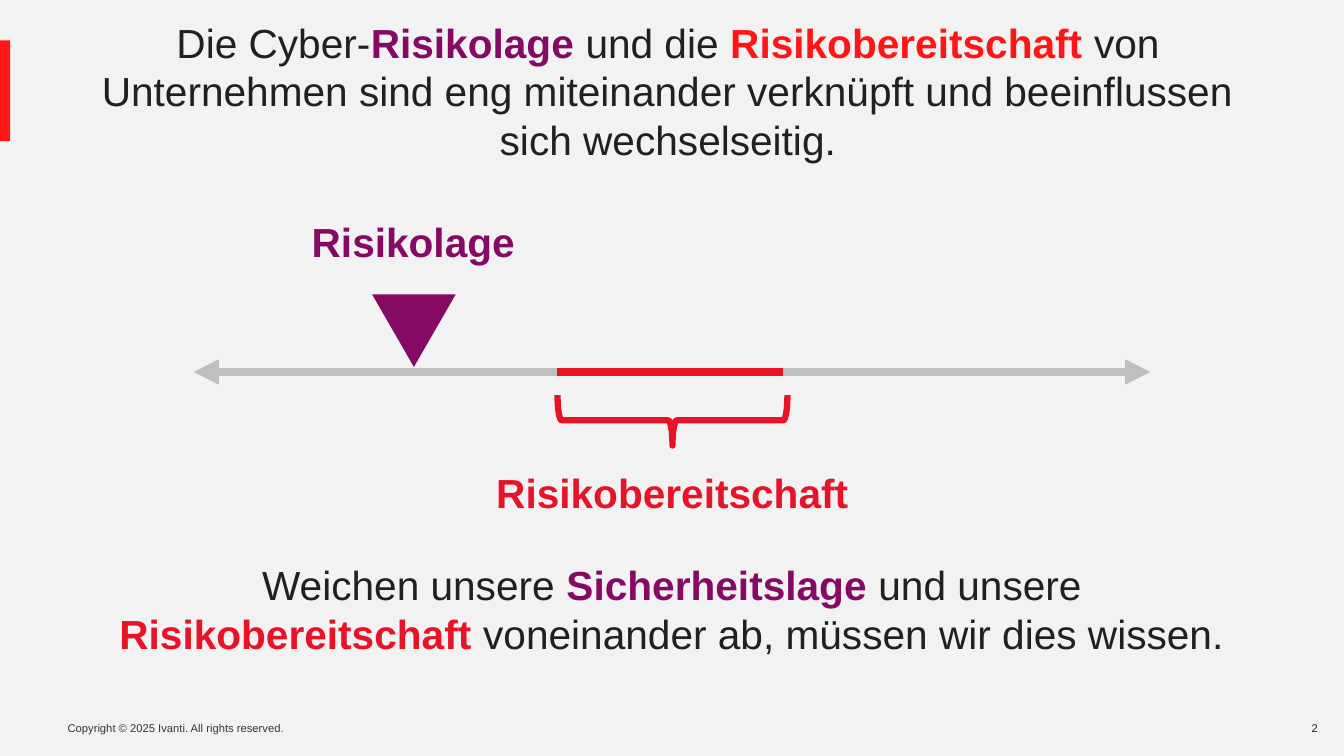
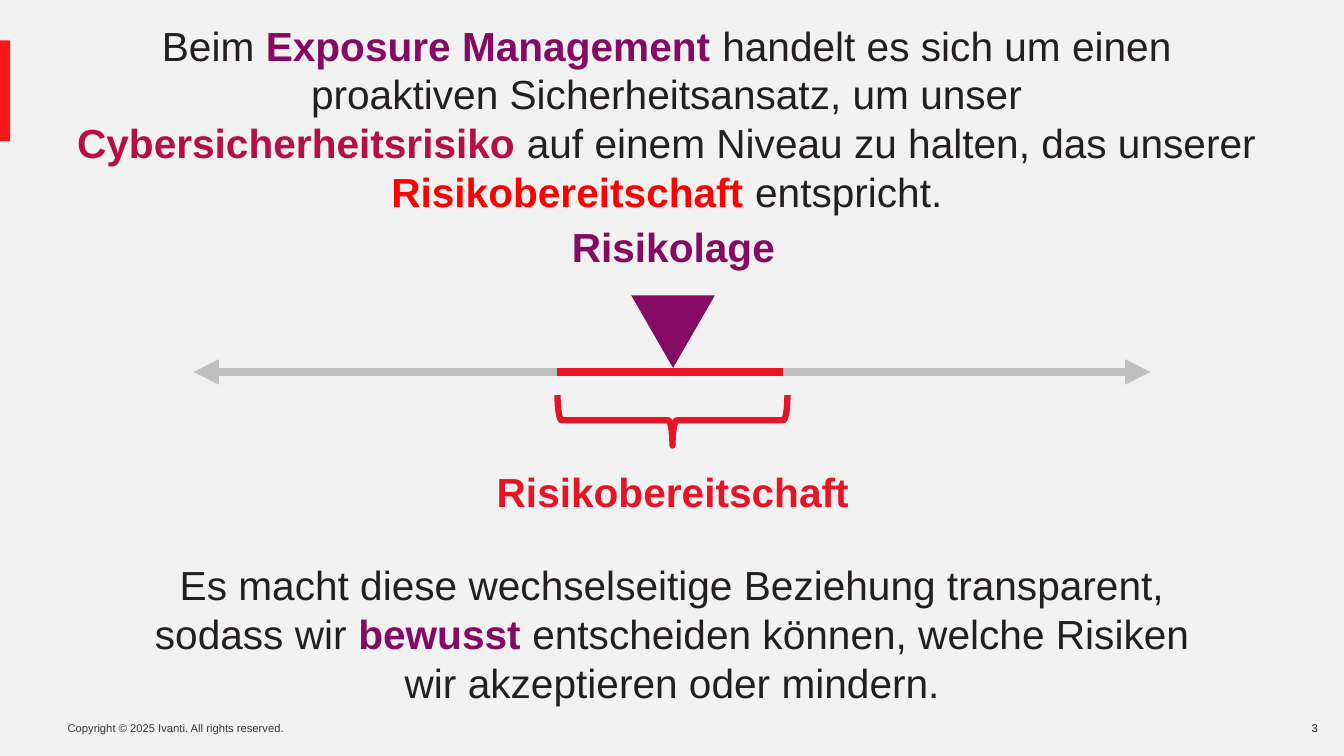
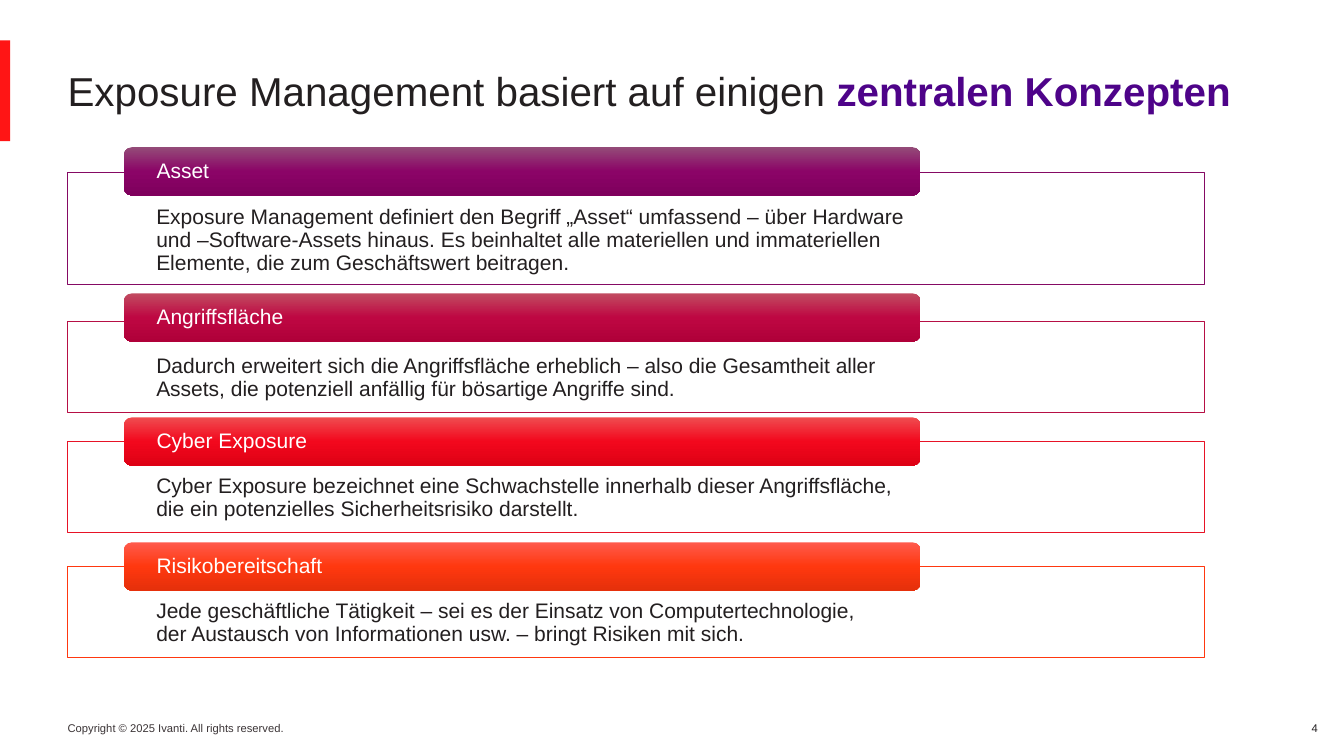
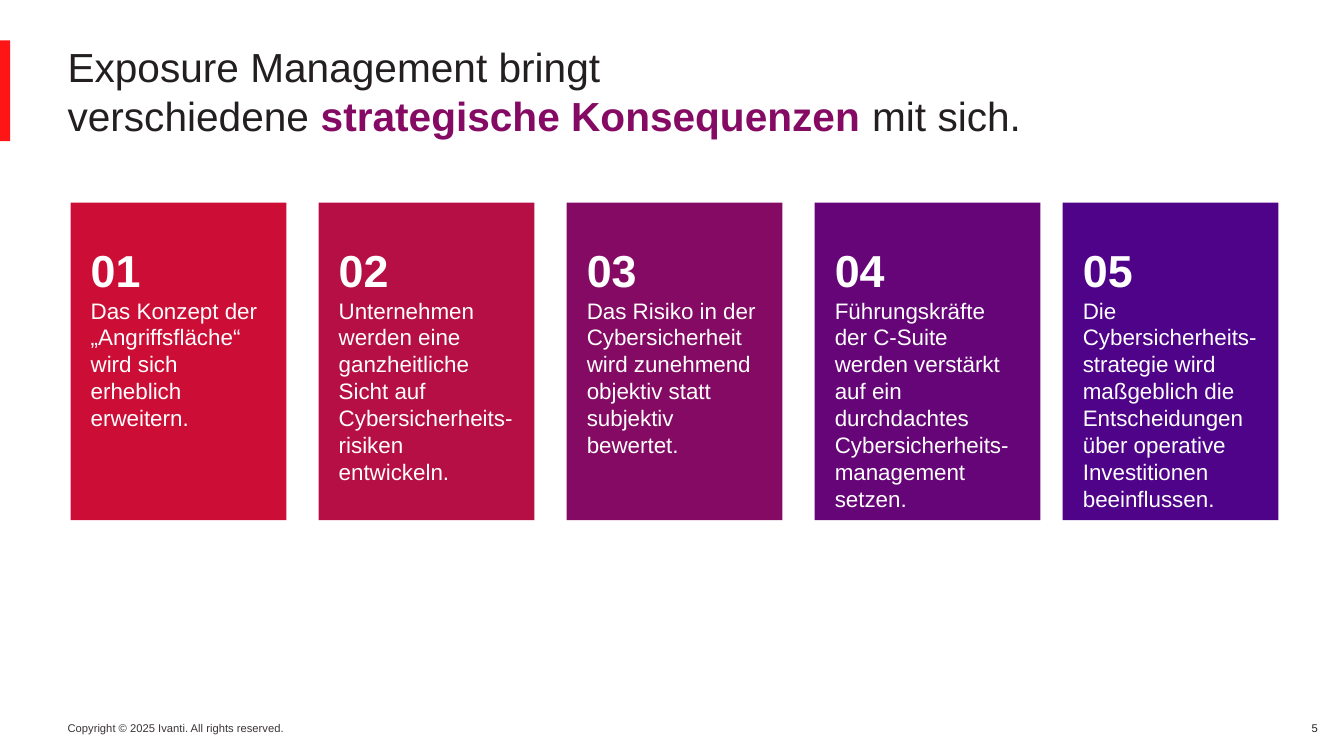
"""Build four slides on exposure management, risk posture and risk appetite."""
from copy import deepcopy
from dataclasses import dataclass

from lxml.etree import SubElement
from pptx import Presentation
from pptx.dml.color import RGBColor
from pptx.enum.shapes import MSO_CONNECTOR, MSO_SHAPE
from pptx.enum.text import MSO_ANCHOR, PP_ALIGN
from pptx.oxml.ns import qn
from pptx.util import Emu, Pt


@dataclass(frozen=True)
class Theme:
    font: str = "Arial"
    ink: str = "231F20"
    foot: str = "3B3436"
    white: str = "FFFFFF"
    pale: str = "F2F2F2"
    grey: str = "BFBFBF"
    band: str = "FF1515"
    pure: str = "FF0000"
    red: str = "E71326"
    rose: str = "CC0E36"
    wine: str = "B60F45"
    plum: str = "850A64"
    grape: str = "660578"
    violet: str = "4E0389"
    orange: str = "FF380F"
    small: float = 8
    body: float = 15
    card: float = 16
    label: float = 29
    key: float = 28.8
    number: float = 32


T = Theme()
PX = 9144
WIDE, HIGH = 1333, 750
LEFT, CENTER, RIGHT = PP_ALIGN.LEFT, PP_ALIGN.CENTER, PP_ALIGN.RIGHT
TOP, MIDDLE = MSO_ANCHOR.TOP, MSO_ANCHOR.MIDDLE
COPY = "Copyright © 2025 Ivanti. All rights reserved."
TITLE = (67, 59, 1201, 62)

SCALES = [
    {
        "title": ["Die Cyber-", ("Risikolage ", T.plum), "und die ", ("Risikobereitschaft", T.band),
                  " von Unternehmen sind eng miteinander verknüpft und beeinflussen sich wechselseitig."],
        "box": TITLE,
        "mark": (369, 292),
        "posture": (233, 210, 354, 61),
        "appetite": (447, 459, 440, 61),
        "note": ["Weichen unsere ", ("Sicherheitslage ", T.plum), "und unsere\n",
                 ("Risikobereitschaft ", T.red), "voneinander ab, müssen wir dies wissen."],
        "place": (93, 551, 1147, 108),
    },
    {
        "title": ["Beim", (" Exposure Management ", T.plum),
                  "handelt es sich um einen proaktiven Sicherheitsansatz, um unser\n",
                  ("Cybersicherheitsrisiko ", T.wine), "auf einem Niveau zu halten, das unserer ",
                  ("Risikobereitschaft", T.pure), " entspricht."],
        "box": (66, 86, 1201, 62),
        "mark": (626, 293),
        "posture": (491, 215, 354, 61),
        "appetite": (451, 458, 433, 61),
        "note": ["Es macht diese wechselseitige Beziehung transparent, sodass wir ", ("bewusst ", T.plum),
                 "entscheiden können, welche Risiken wir akzeptieren oder mindern."],
        "place": (118, 551, 1098, 162),
    },
]

TERMS = [
    ("Asset", 146, 171, 111, T.plum, ("944B78", "8B0467", "7F005D"),
     "Exposure Management definiert den Begriff „Asset“ umfassend – über Hardware\n"
     "und –Software-Assets hinaus. Es beinhaltet alle materiellen und immateriellen\n"
     "Elemente, die zum Geschäftswert beitragen."),
    ("Angriffsfläche", 291, 319, 90, T.wine, ("C14C61", "BE0742", "AF0039"),
     "Dadurch erweitert sich die Angriffsfläche erheblich – also die Gesamtheit aller\n"
     "Assets, die potenziell anfällig für bösartige Angriffe sind."),
    ("Cyber Exposure", 414, 438, 90, T.red, ("F04C50", "F2081D", "DE0014"),
     "Cyber Exposure bezeichnet eine Schwachstelle innerhalb dieser Angriffsfläche,\n"
     "die ein potenzielles Sicherheitsrisiko darstellt."),
    ("Risikobereitschaft", 538, 562, 90, T.orange, ("FF5B4D", "FF380F", "E5300B"),
     "Jede geschäftliche Tätigkeit – sei es der Einsatz von Computertechnologie,\n"
     "der Austausch von Informationen usw. – bringt Risiken mit sich."),
]

CARDS = [
    (T.rose, 214, ["Das Konzept der „Angriffsfläche“ wird sich erheblich erweitern."]),
    (T.wine, 214, ["Unternehmen werden eine ganzheitliche",
                   "Sicht auf Cybersicherheits-risiken entwickeln."]),
    (T.plum, 214, ["Das Risiko in der Cybersicherheit wird zunehmend objektiv statt subjektiv bewertet."]),
    (T.grape, 224, ["Führungskräfte der C-Suite\nwerden verstärkt auf ein durchdachtes "
                    "Cybersicherheits-management setzen."]),
    (T.violet, 214, ["Die Cybersicherheits-strategie wird maßgeblich die Entscheidungen über "
                     "operative Investitionen beeinflussen."]),
]


def px(*values):
    return [Emu(value * PX) for value in values]


def rgb(code):
    return RGBColor.from_string(code)


def setup(frame, pad=(10, 5, 10, 5), anchor=TOP, wrap=True):
    frame.word_wrap = wrap
    frame.vertical_anchor = anchor
    (frame.margin_left, frame.margin_top,
     frame.margin_right, frame.margin_bottom) = px(*pad)


def write(para, parts, size, color=T.ink, align=LEFT, bold=False, lead=None):
    para.alignment = align
    if lead:
        para.line_spacing = lead
    font = para.font
    font.name, font.size, font.bold = T.font, Pt(size), bold
    font.color.rgb = rgb(color)
    for part in parts:
        words, accent = (part, None) if isinstance(part, str) else part
        for row, line in enumerate(words.split("\n")):
            if row:
                para.add_line_break()
            if line:
                run = para.add_run()
                run.text = line
                if accent:
                    run.font.bold = True
                    run.font.color.rgb = rgb(accent)


def text(slide, box, parts, size, pad=(10, 5, 10, 5), anchor=TOP, wrap=True, **style):
    frame = slide.shapes.add_textbox(*px(*box)).text_frame
    setup(frame, pad, anchor, wrap)
    write(frame.paragraphs[0], parts, size, **style)


def shape(slide, kind, box, fill=None, line=None, width=0.5, turn=0):
    item = slide.shapes.add_shape(kind, *px(*box))
    item.shadow.inherit = False
    item.rotation = turn
    if fill:
        item.fill.solid()
        item.fill.fore_color.rgb = rgb(fill)
    else:
        item.fill.background()
    if line:
        item.line.color.rgb = rgb(line)
        item.line.width = Pt(width)
    else:
        item.line.fill.background()
    return item


def rule(slide, start, end, y, color, heads=False):
    item = slide.shapes.add_connector(MSO_CONNECTOR.STRAIGHT, *px(start, y, end, y))
    item.line.color.rgb = rgb(color)
    item.line.width = Pt(6)
    props = item.element.spPr
    if heads:
        for tag in ("a:headEnd", "a:tailEnd"):
            SubElement(props.find(qn("a:ln")), qn(tag), type="triangle")
    SubElement(props, qn("a:effectLst"))


def shade(item, colors):
    fill = item.fill
    fill.gradient()
    fill.gradient_angle = 270
    stops = item.element.spPr.find(".//" + qn("a:gsLst"))
    stops.insert(1, deepcopy(stops[0]))
    for stop, color, at in zip(fill.gradient_stops, colors, (0, 0.5, 1)):
        stop.color.rgb = rgb(color)
        stop.position = at


def page(deck, number, title, back=T.white, box=TITLE, size=T.label, align=LEFT):
    slide = deck.slides.add_slide(deck.slide_layouts[6])
    slide.background.fill.solid()
    slide.background.fill.fore_color.rgb = rgb(back)
    pad = (0, 5, 10, 5)
    text(slide, (67, 711, 228, 24), [COPY], T.small, pad, wrap=False, color=T.foot)
    shape(slide, MSO_SHAPE.RECTANGLE, (0, 40, 10, 100), T.band)
    text(slide, (1269, 711, 48, 24), [str(number)], T.small, pad, align=RIGHT)
    text(slide, box, title, size, (0, 0, 10, 0), MIDDLE, align=align)
    return slide


def scale(deck, number, data):
    slide = page(deck, number, data["title"], T.pale, data["box"], align=CENTER)
    rule(slide, 192, 1141, 369, T.grey, heads=True)
    shape(slide, MSO_SHAPE.LEFT_BRACE, (642, 303, 50, 228), line=T.red, width=4.5, turn=270)
    rule(slide, 552, 777, 369, T.red)
    shape(slide, MSO_SHAPE.ISOSCELES_TRIANGLE, (*data["mark"], 83, 72), T.plum, turn=180)
    for key, word, color in (("appetite", "Risikobereitschaft", T.red),
                             ("posture", "Risikolage", T.plum)):
        text(slide, data[key], [word], T.label, color=color, align=CENTER, bold=True)
    text(slide, data["place"], data["note"], T.label, align=CENTER)


def terms(deck, number):
    title = ["Exposure Management basiert auf einigen ", ("zentralen Konzepten", T.violet)]
    slide = page(deck, number, title, size=T.key)
    for name, head, top, high, color, blend, words in TERMS:
        panel = shape(slide, MSO_SHAPE.RECTANGLE, (67, top, 1128, high), T.white, color)
        setup(panel.text_frame, (88, 34, 88, 12))
        write(panel.text_frame.paragraphs[0], [words], T.body, lead=0.9)
        tab = shape(slide, MSO_SHAPE.ROUNDED_RECTANGLE, (123, head, 790, 48))
        shade(tab, blend)
        setup(tab.text_frame, (30, 0, 30, 0), MIDDLE)
        write(tab.text_frame.paragraphs[0], [name], T.body, T.white, lead=0.9)


def cards(deck, number):
    title = ["Exposure Management bringt\nverschiedene ",
             ("strategische Konsequenzen ", T.plum), "mit sich."]
    slide = page(deck, number, title, box=(67, 59, 1266, 62))
    for col, (color, wide, lines) in enumerate(CARDS):
        card = shape(slide, MSO_SHAPE.RECTANGLE, (70 + 246 * col, 201, wide, 315), color)
        frame = card.text_frame
        setup(frame, (20, 40, 20, 10))
        write(frame.paragraphs[0], [f"{col + 1:02}"], T.number, T.white, bold=True)
        for line in lines:
            write(frame.add_paragraph(), [line], T.card, T.white)


def main():
    deck = Presentation()
    deck.slide_width, deck.slide_height = px(WIDE, HIGH)
    for number, data in enumerate(SCALES, 2):
        scale(deck, number, data)
    terms(deck, 4)
    cards(deck, 5)
    deck.save("out.pptx")


if __name__ == "__main__":
    main()
